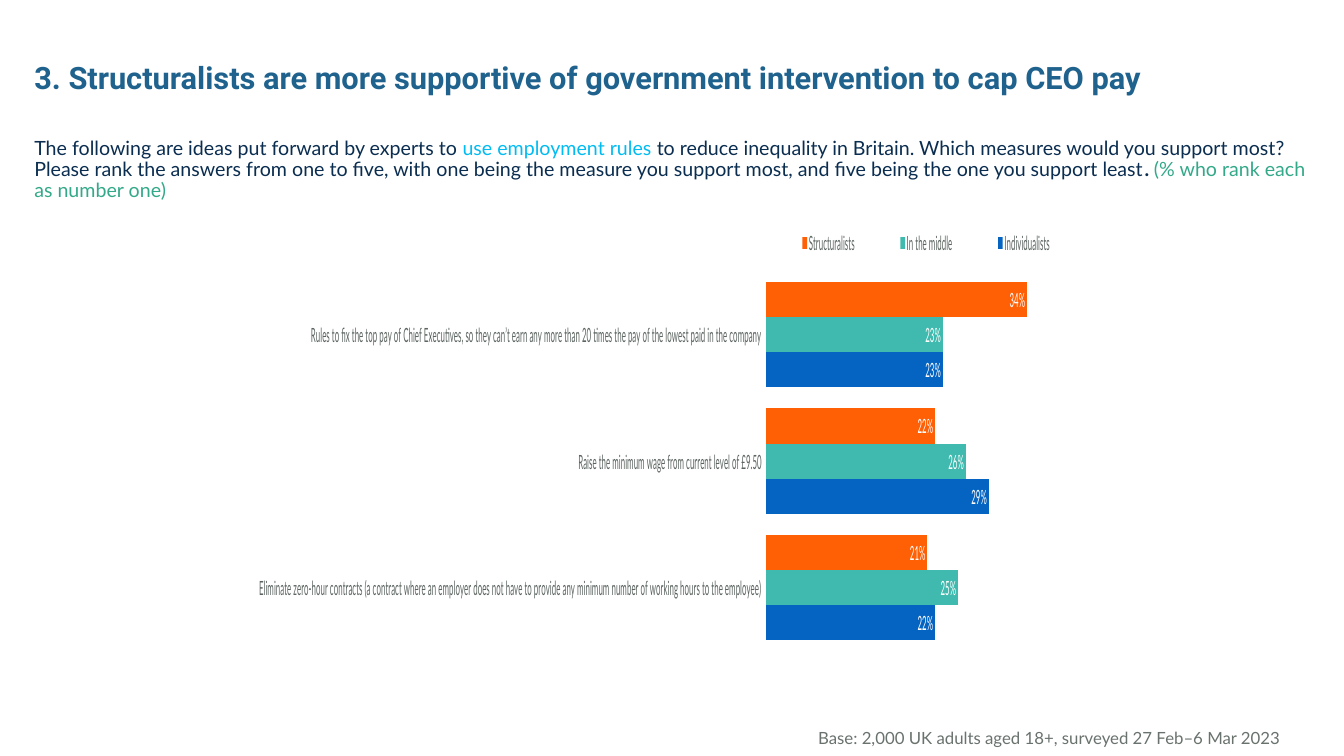
import pptx
import pptx.chart.data
import pptx.dml.color
import pptx.enum.chart
import pptx.enum.text
import pptx.oxml
import pptx.oxml.ns
import pptx.util
from pptx.util import Inches

COLORS = {
    "title": "1E628D", "question": "0A2D50", "highlight": "00BCF2", "note": "34A989",
    "base": "69726D", "chart_text": "5B645F", "label": "FFFFFF",
    "individualists": "0563C1", "middle": "40BAAE", "structuralists": "FF5F05",
}

MEASURES = [
    "Eliminate zero-hour contracts (a contract where an employer does not have to provide "
    "any minimum number of working hours to the employee)",
    "Raise the minimum wage from current level of £9.50",
    "Rules to fix the top pay of Chief Executives, so they can’t earn any more than 20 times "
    "the pay of the lowest paid in the company",
]
GROUPS = [
    ("Individualists", (0.22, 0.29, 0.23), "individualists"),
    ("In the middle", (0.25, 0.26, 0.23), "middle"),
    ("Structuralists", (0.21, 0.22, 0.34), "structuralists"),
]


def rgb(name):
    return pptx.dml.color.RGBColor.from_string(COLORS[name])


def style_font(font, size, color, name="Lato"):
    font.size = pptx.util.Pt(size)
    font.name = name
    font.color.rgb = rgb(color)


def place(box, left, top, width, height):
    box.left, box.top = Inches(left), Inches(top)
    box.width, box.height = Inches(width), Inches(height)


def write_text(box, parts, size, align=pptx.enum.text.PP_ALIGN.LEFT, font_name="Lato"):
    """Fill a box with one paragraph of (text, color, bold) parts."""
    frame = box.text_frame
    frame.word_wrap = True
    frame.auto_size = pptx.enum.text.MSO_AUTO_SIZE.NONE
    frame.vertical_anchor = pptx.enum.text.MSO_ANCHOR.TOP
    paragraph = frame.paragraphs[0]
    properties = paragraph._p.get_or_add_pPr()
    properties.set("marL", "0")
    properties.set("indent", "0")
    properties.append(pptx.oxml.parse_xml(
        f'<a:buNone {pptx.oxml.ns.nsdecls("a")}/>'))
    paragraph.alignment = align
    paragraph.line_spacing = 0.9
    paragraph.space_before = pptx.util.Pt(0)
    style_font(paragraph.font, size, parts[0][1], font_name)
    for text, color, bold in parts:
        run = paragraph.add_run()
        run.text = text
        run.font.bold = bold
        style_font(run.font, size, color, font_name)


def set_layout(parent, index, x, y, width, height, inner=False):
    """Give a chart part a manual place, as fractions of the chart."""
    for old in parent.findall(pptx.oxml.ns.qn("c:layout")):
        parent.remove(old)
    target = '<c:layoutTarget val="inner"/>' if inner else ""
    parent.insert(index, pptx.oxml.parse_xml(
        f'<c:layout {pptx.oxml.ns.nsdecls("c")}><c:manualLayout>{target}'
        '<c:xMode val="edge"/><c:yMode val="edge"/>'
        f'<c:x val="{x}"/><c:y val="{y}"/><c:w val="{width}"/><c:h val="{height}"/>'
        '</c:manualLayout></c:layout>'))


def add_support_chart(slide):
    support = pptx.chart.data.CategoryChartData(number_format="0%")
    support.categories = MEASURES
    for name, shares, _ in GROUPS:
        support.add_series(name, shares)
    chart = slide.shapes.add_chart(
        pptx.enum.chart.XL_CHART_TYPE.BAR_CLUSTERED,
        Inches(2.57), Inches(2.26), Inches(8.27), Inches(4.33), support).chart
    chart.has_title = False
    style_font(chart.font, 14, "chart_text")

    # Bars and their labels
    plot = chart.plots[0]
    plot.gap_width = 60
    plot.overlap = 0
    plot.vary_by_categories = False
    for series, (_, _, color) in zip(plot.series, GROUPS):
        series.format.fill.solid()
        series.format.fill.fore_color.rgb = rgb(color)
        labels = series.data_labels
        labels.show_value = True
        labels.number_format = "0%"
        labels.number_format_is_linked = False
        labels.position = pptx.enum.chart.XL_LABEL_POSITION.INSIDE_END
        style_font(labels.font, 14, "label")

    # Axes
    measure_axis, share_axis = chart.category_axis, chart.value_axis
    measure_axis.format.line.fill.background()
    measure_axis.major_tick_mark = pptx.enum.chart.XL_TICK_MARK.OUTSIDE
    style_font(measure_axis.tick_labels.font, 14, "chart_text")
    share_axis.minimum_scale, share_axis.maximum_scale = 0, 0.4
    share_axis.has_major_gridlines = False
    share_axis.visible = False

    # Legend across the top, plot below
    chart.has_legend = True
    legend = chart.legend
    legend.position = pptx.enum.chart.XL_LEGEND_POSITION.RIGHT
    legend.include_in_layout = False
    style_font(legend.font, 14, "chart_text")
    legend_pos = legend._element.find(pptx.oxml.ns.qn("c:legendPos"))
    set_layout(legend._element, 0 if legend_pos is None else 1, 0, 0, 1, 0.07)
    plot_area = chart._chartSpace.chart.plotArea
    set_layout(plot_area, 0, 0.02, 0.1, 0.92, 0.87, inner=True)


def main():
    presentation = pptx.Presentation()
    presentation.slide_width, presentation.slide_height = Inches(13.33), Inches(7.5)
    slide = presentation.slides.add_slide(presentation.slide_layouts[1])

    # Headline and survey question
    headline = slide.shapes.title
    place(headline, 0.24, 0.57, 12.87, 0.43)
    write_text(headline, [
        ("3. Structuralists are more supportive of government intervention to cap CEO pay",
         "title", True)], 22, font_name="Roboto")
    question = slide.placeholders[1]
    place(question, 0.24, 1.32, 12.93, 0.63)
    write_text(question, [
        ("The following are ideas put forward by experts to ", "question", False),
        ("use employment rules ", "highlight", False),
        ("to reduce inequality in Britain. Which measures would you support most? "
         "Please rank the answers from one to five, with one being the measure you support "
         "most, and five being the one you support least", "question", False),
        (". ", "question", True),
        ("(% who rank each as number one)", "note", False)], 14)

    # Survey base
    survey_base = slide.shapes.add_textbox(
        Inches(3.56), Inches(7.19), Inches(9.24), Inches(0.21))
    write_text(survey_base, [
        ("Base: 2,000 UK adults aged 18+, surveyed 27 Feb–6 Mar 2023", "base", False)],
        12, pptx.enum.text.PP_ALIGN.RIGHT)

    add_support_chart(slide)
    presentation.save("out.pptx")


if __name__ == "__main__":
    main()
